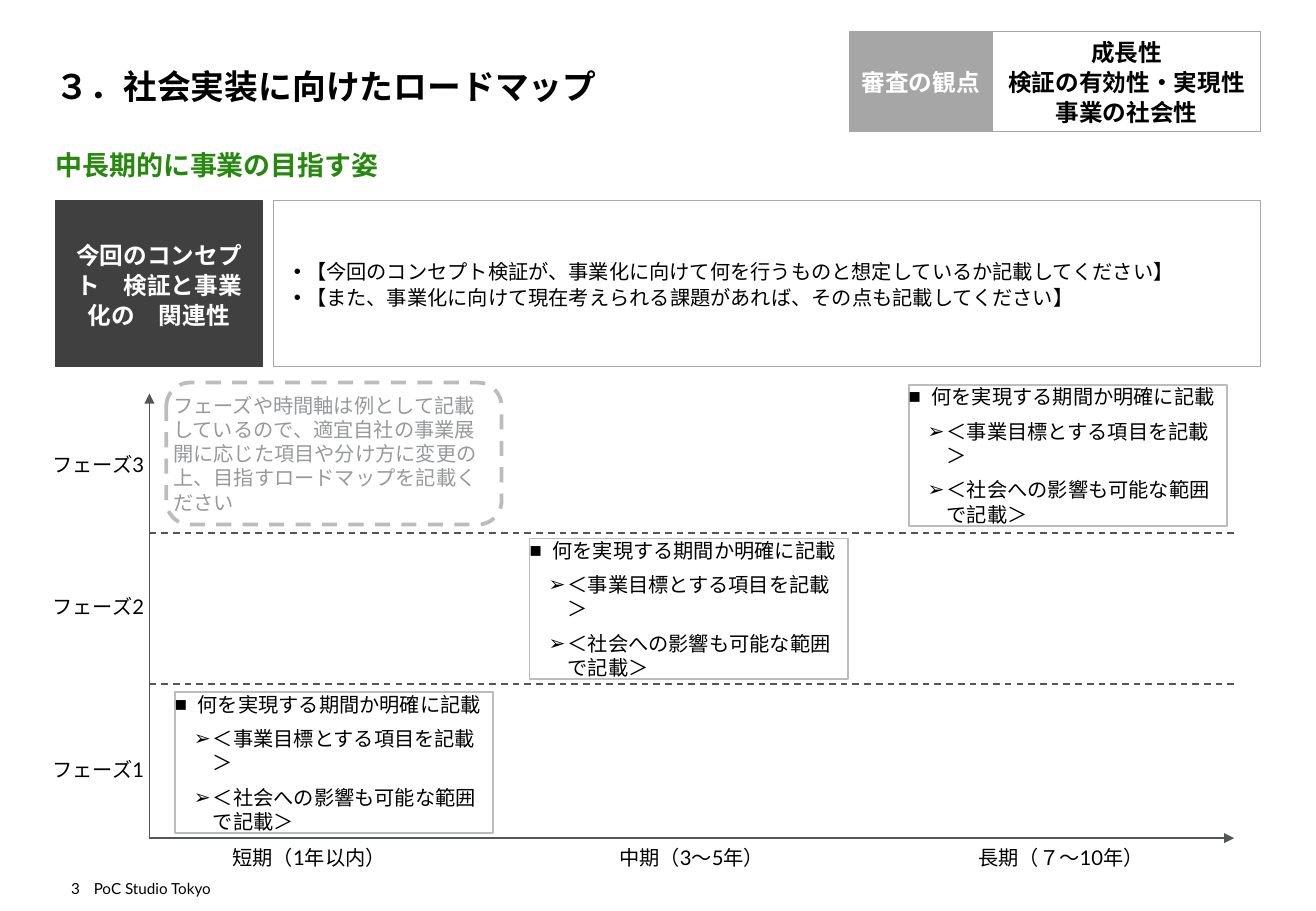
from lxml.etree import SubElement
from pptx import Presentation
from pptx.dml.color import RGBColor
from pptx.enum.dml import MSO_LINE
from pptx.enum.shapes import MSO_CONNECTOR, MSO_SHAPE
from pptx.enum.text import MSO_ANCHOR, MSO_AUTO_SIZE, PP_ALIGN
from pptx.oxml.ns import qn
from pptx.util import Pt

LATO, NOTO = "Lato", "Noto Sans CJK JP"
LEFT, CENTER, RIGHT = PP_ALIGN.LEFT, PP_ALIGN.CENTER, PP_ALIGN.RIGHT
MIDDLE, BOTTOM = MSO_ANCHOR.MIDDLE, MSO_ANCHOR.BOTTOM
RECT, ROUNDED = MSO_SHAPE.RECTANGLE, MSO_SHAPE.ROUNDED_RECTANGLE


def write(shape, lines, size, color="000000", bold=False, align=LEFT, anchor=MIDDLE,
          font=LATO, inset=0, spacing=1.0, bullets=()):
    """Fill a shape with paragraphs; bullets holds (mark, margin, hanging, space before)."""
    frame = shape.text_frame
    frame.text = "\n".join(lines)
    frame.word_wrap = True
    frame.auto_size = MSO_AUTO_SIZE.NONE
    frame.vertical_anchor = anchor
    frame.margin_left = frame.margin_right = Pt(inset)
    frame.margin_top = frame.margin_bottom = Pt(inset)
    for index, paragraph in enumerate(frame.paragraphs):
        paragraph.alignment = align
        paragraph.line_spacing = spacing
        if bullets:
            mark, margin, hanging, before = bullets[index]
            paragraph.space_before = Pt(before)
            properties = paragraph._p.get_or_add_pPr()
            properties.set("marL", str(Pt(margin)))
            properties.set("indent", str(-Pt(hanging)))
            SubElement(properties, qn("a:buFont"), typeface="Arial")
            SubElement(properties, qn("a:buChar"), char=mark)
        for run in paragraph.runs:
            run.font.size = Pt(size)
            run.font.bold = bold
            run.font.name = font
            run.font.color.rgb = RGBColor.from_string(color)
            SubElement(run._r.get_or_add_rPr(), qn("a:ea"), typeface=NOTO)


def add_panel(kind, place, fill, outline, width):
    panel = slide.shapes.add_shape(kind, *map(Pt, place))
    panel.shadow.inherit = False
    panel.fill.solid()
    panel.fill.fore_color.rgb = RGBColor.from_string(fill)
    panel.line.color.rgb = RGBColor.from_string(outline)
    panel.line.width = Pt(width)
    return panel


deck = Presentation()
deck.slide_width, deck.slide_height = Pt(780), Pt(540)
slide = deck.slides.add_slide(deck.slide_layouts[5])

# Title, subtitle, footer and axis labels
title = slide.shapes.title
title.left, title.top, title.width, title.height = Pt(33), Pt(14.4), Pt(714), Pt(48.5)
write(title, ["３．社会実装に向けたロードマップ"], 20, bold=True, anchor=BOTTOM)

labels = [
    ("PoC Studio Tokyo", (55.6, 518.4, 320, 13.7), dict(size=9, anchor=BOTTOM)),
    ("3", (33, 518.4, 14.4, 13.7), dict(size=9, anchor=BOTTOM, align=RIGHT)),
    ("中長期的に事業の目指す姿", (33, 79.2, 343, 36.7),
     dict(size=16, color="26890D", bold=True)),
]
for period, left in (("短期（1年以内）", 116.6), ("中期（3～5年）", 343.4),
                     ("長期（７～10年）", 562.3)):
    labels.append((period, (left, 501.1, 133.2, 13.7), dict(size=12, align=CENTER)))
for phase, top in (("フェーズ1", 437.8), ("フェーズ2", 341.3), ("フェーズ3", 257)):
    labels.append((phase, (29.5, top, 57.6, 36.7), dict(size=12, align=CENTER)))
for text, place, style in labels:
    write(slide.shapes.add_textbox(*map(Pt, place)), [text], **style)

# Relation between the concept test and the business
heading = dict(size=14, bold=True, align=CENTER, font=NOTO, inset=5.76, spacing=1.06)
relation = add_panel(RECT, (33, 119, 122.5, 98.5), "404040", "404040", 0.5)
write(relation, ["今回のコンセプト　検証と事業化の　関連性"], color="FFFFFF", **heading)
explanation = add_panel(RECT, (162, 119, 585.4, 98.5), "FFFFFF", "A7A8AA", 0.5)
write(explanation, [
    "【今回のコンセプト検証が、事業化に向けて何を行うものと想定しているか記載してください】",
    "【また、事業化に向けて現在考えられる課題があれば、その点も記載してください】",
], 12, font=NOTO, inset=5.76, spacing=1.06, bullets=[("•", 13.7, 7.2, 0)] * 2)

# Axes with arrowheads, dashed phase borders
AXIS_X, AXIS_Y, AXIS_END = 88.6, 496.8, 731.5
for x1, y1, x2, y2, is_axis in (
    (AXIS_X, AXIS_Y, AXIS_X, 233.3, True),
    (AXIS_X, AXIS_Y, AXIS_END, AXIS_Y, True),
    (AXIS_X, 316.1, AXIS_END, 316.1, False),
    (AXIS_X, 405.4, AXIS_END, 405.4, False),
):
    rule = slide.shapes.add_connector(MSO_CONNECTOR.STRAIGHT, Pt(x1), Pt(y1), Pt(x2), Pt(y2))
    rule.line.color.rgb = RGBColor.from_string("53565A")
    rule.line.width = Pt(1)
    if is_axis:
        SubElement(rule.line._get_or_add_ln(), qn("a:tailEnd"), type="triangle")
    else:
        rule.line.dash_style = MSO_LINE.DASH
    SubElement(rule._element.spPr, qn("a:effectLst"))

# One goal box per phase
for left, top in ((103.7, 410.4), (313.9, 319.2), (538.6, 228.2)):
    goal = add_panel(RECT, (left, top, 188.6, 83.5), "FFFFFF", "BBBCBC", 1)
    write(goal, [
        "何を実現する期間か明確に記載",
        "＜事業目標とする項目を記載＞",
        "＜社会への影響も可能な範囲で記載＞",
    ], 12, bullets=[("■", 13.5, 13.5, 0)] + [("➢", 22.5, 11.25, 6)] * 2)
    for detail in goal.text_frame.paragraphs[1:]:
        detail.level = 1

# Review criteria
criteria = add_panel(RECT, (588.2, 18.7, 159.2, 59), "FFFFFF", "A6A6A6", 0.5)
write(criteria, ["成長性", "検証の有効性・実現性", "事業の社会性"], **heading)
viewpoint = add_panel(RECT, (503.3, 18.7, 84.9, 59), "A6A6A6", "A6A6A6", 0.5)
write(viewpoint, ["審査の観点"], color="FFFFFF", **heading)

# Guidance for filling in the roadmap
guidance = add_panel(ROUNDED, (98.6, 226.8, 198.7, 84.2), "FFFFFF", "BBBCBC", 2.25)
guidance.line.dash_style = MSO_LINE.DASH
write(guidance, ["フェーズや時間軸は例として記載しているので、適宜自社の事業展開に応じた項目や"
                 "分け方に変更の上、目指すロードマップを記載ください"], 12, color="97999B")

deck.save("out.pptx")
